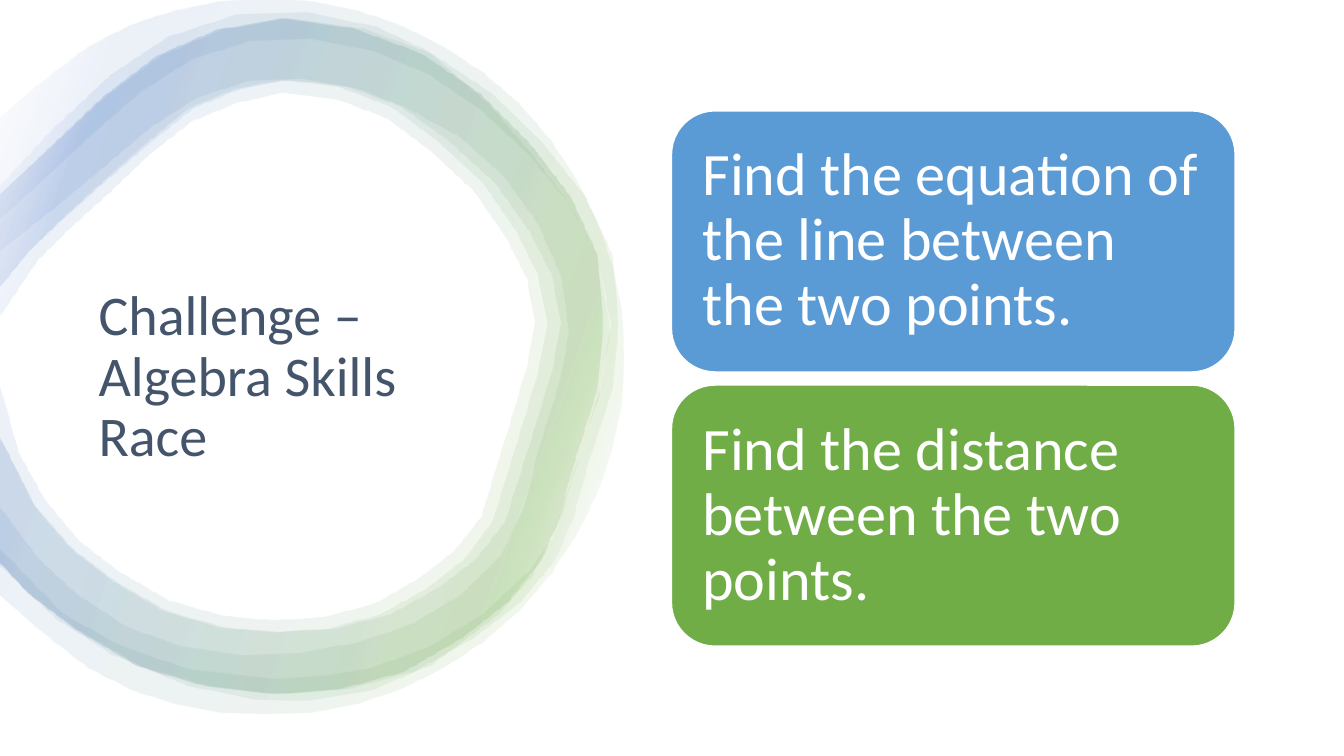
"""Build the algebra challenge slide: a layered ring, a title and two task cards."""
import math
from dataclasses import dataclass

import pptx
import pptx.dml.color
import pptx.enum.shapes
import pptx.enum.text
import pptx.oxml
import pptx.oxml.ns
import pptx.shapes.autoshape
import pptx.slide
import pptx.text.text
import pptx.util

PX = 9144
CHORD = 60
FONT = "Calibri"
WHITE = "FFFFFF"
STOPS = ((2, WHITE), (16, "70AD47"), (85, "4472C4"), (100, WHITE))
ALPHA = 10
ANGLE = 200

Point = tuple[float, float]


@dataclass
class Ring:
    outer: list[Point]
    inner: list[Point]
    stretch: float = 1


@dataclass
class Card:
    text: str
    fill: str


BAND = [
    (0, 192), (56, 139), (155, 55), (279, 18), (418, 53), (525, 142),
    (592, 252), (592, 386), (568, 462), (554, 514), (537, 555), (503, 597),
    (400, 666), (271, 688), (137, 661), (27, 588), (0, 558),
]
WIDE = [
    (0, 434), (34, 502), (70, 544), (162, 606), (271, 627), (377, 609),
    (460, 554), (488, 517), (502, 472), (534, 365), (542, 320), (533, 272),
    (479, 182), (388, 106), (336, 86), (279, 79), (232, 88), (187, 107),
    (99, 182), (28, 249), (0, 284),
]
TIGHT = [
    (0, 383), (18, 448), (44, 495), (78, 536), (167, 595), (271, 615), (372, 598),
    (451, 545), (477, 512), (490, 469), (523, 360), (530, 319), (522, 276),
    (470, 190), (383, 117), (333, 98), (279, 92), (190, 120), (108, 191),
    (37, 258), (0, 313),
]
WAVE_OUT = [
    (0, 184), (50, 130), (109, 75), (166, 37), (234, 15), (305, 13), (373, 27),
    (424, 51), (484, 103), (526, 152), (565, 203), (594, 262), (605, 329),
    (593, 396), (574, 452), (557, 511), (527, 572), (494, 609), (428, 659),
    (366, 685), (300, 695), (251, 693), (186, 680), (111, 649), (56, 614), (0, 561),
]
WAVE_IN = [
    (0, 503), (38, 554), (76, 589), (125, 621), (181, 641), (239, 649),
    (297, 647), (353, 637), (407, 619), (456, 590), (497, 550), (520, 501),
    (535, 441), (554, 381), (564, 329), (556, 274), (533, 222), (499, 175),
    (455, 136), (404, 108), (353, 88), (299, 79), (246, 81), (196, 97),
    (150, 126), (105, 164), (57, 204), (0, 249),
]
DISC_OUT = [
    (0, 116), (86, 47), (171, 11), (263, -1), (355, 11), (440, 47), (514, 103),
    (570, 177), (606, 262), (618, 354), (606, 446), (570, 531), (514, 605),
    (440, 661), (355, 697), (263, 708), (171, 697), (86, 661), (0, 590),
]
DISC_IN = [
    (0, 544), (62, 608), (120, 640), (187, 663), (273, 672), (366, 662),
    (424, 641), (478, 608), (524, 565), (546, 533), (564, 479), (594, 385),
    (605, 322), (592, 259), (563, 202), (522, 152), (475, 109), (424, 74),
    (367, 50), (307, 39), (247, 41), (190, 59), (138, 92), (90, 134),
    (42, 179), (0, 217),
]
RINGS = [
    Ring(WAVE_OUT, WAVE_IN),
    Ring(BAND, WIDE, 1.025),
    Ring(BAND, TIGHT),
    Ring(BAND, WIDE),
    Ring(DISC_OUT, DISC_IN),
]
CARDS = [
    Card("Find the equation of the line between the two points.", "5B9BD5"),
    Card("Find the distance between the two points.", "70AD47"),
]


def px(size: float) -> int:
    """Turn px into EMU."""
    return round(size * PX)


def color(code: str) -> pptx.dml.color.RGBColor:
    """Turn a hex string into a colour."""
    return pptx.dml.color.RGBColor.from_string(code)


def curve(knots: list[Point]) -> list[Point]:
    """Return a smooth line through the knots."""
    ends = [knots[0], *knots, knots[-1]]
    line: list[Point] = [knots[0]]
    for a, b, c, d in zip(ends, ends[1:], ends[2:], ends[3:]):
        steps = max(1, round(math.dist(b, c) / CHORD))
        for step in range(1, steps + 1):
            t = step / steps
            x, y = (
                q + t * (r - p + t * (2 * p - 5 * q + 4 * r - s
                                      + t * (3 * q - p - 3 * r + s))) / 2
                for p, q, r, s in zip(a, b, c, d)
            )
            line.append((x, y))
    return line


def blend(shape: pptx.shapes.autoshape.Shape) -> None:
    """Fill a shape with the sheer ring gradient."""
    stops = "".join(
        f'<a:gs pos="{place * 1000}"><a:srgbClr val="{code}">'
        f'<a:alpha val="{ALPHA * 1000}"/></a:srgbClr></a:gs>'
        for place, code in STOPS
    )
    shape.fill.background()
    old = shape.element.spPr.find(pptx.oxml.ns.qn("a:noFill"))
    new = pptx.oxml.parse_xml(
        f'<a:gradFill {pptx.oxml.ns.nsdecls("a")}><a:gsLst>{stops}</a:gsLst>'
        f'<a:lin ang="{ANGLE * 60000}" scaled="0"/></a:gradFill>'
    )
    shape.element.spPr.replace(old, new)


def draw_ring(slide: pptx.slide.Slide, ring: Ring) -> None:
    """Draw one ring cut off by the left edge."""
    line = [
        (px(x * ring.stretch), px(y))
        for x, y in curve(ring.outer) + curve(ring.inner)
    ]
    pen = slide.shapes.build_freeform(*line[0])
    pen.add_line_segments(line[1:], close=True)
    shape = pen.convert_to_shape()
    shape.shadow.inherit = False
    shape.line.fill.background()
    blend(shape)


def write(frame: pptx.text.text.TextFrame, text: str, size: int, code: str) -> None:
    """Write one left-aligned paragraph, centred in height."""
    frame.word_wrap = True
    frame.vertical_anchor = pptx.enum.text.MSO_ANCHOR.MIDDLE
    para = frame.paragraphs[0]
    para.text = text
    para.alignment = pptx.enum.text.PP_ALIGN.LEFT
    para.line_spacing = 0.9
    para.font.name = FONT
    para.font.size = pptx.util.Pt(size)
    para.font.color.rgb = color(code)


def draw_card(slide: pptx.slide.Slide, card: Card, top: int) -> None:
    """Draw one rounded task card."""
    shape = slide.shapes.add_shape(
        pptx.enum.shapes.MSO_SHAPE.ROUNDED_RECTANGLE, px(666), px(top), px(559), px(259)
    )
    shape.shadow.inherit = False
    shape.fill.solid()
    shape.fill.fore_color.rgb = color(card.fill)
    shape.line.color.rgb = color(WHITE)
    shape.line.width = pptx.util.Pt(1)
    frame = shape.text_frame
    frame.margin_left = frame.margin_right = px(18)
    frame.margin_top = frame.margin_bottom = px(18)
    write(frame, card.text, 43, WHITE)


def main() -> None:
    """Build and save the slide."""
    deck = pptx.Presentation()
    deck.slide_width, deck.slide_height = px(1333), px(750)
    slide = deck.slides.add_slide(deck.slide_layouts[6])
    for ring in RINGS:
        draw_ring(slide, ring)
    title = slide.shapes.add_textbox(px(88), px(221), px(400), px(308))
    write(title.text_frame, "Challenge – Algebra Skills Race", 40, "44546A")
    for row, card in enumerate(CARDS):
        draw_card(slide, card, 110 + 272 * row)
    deck.save("out.pptx")


if __name__ == "__main__":
    main()
